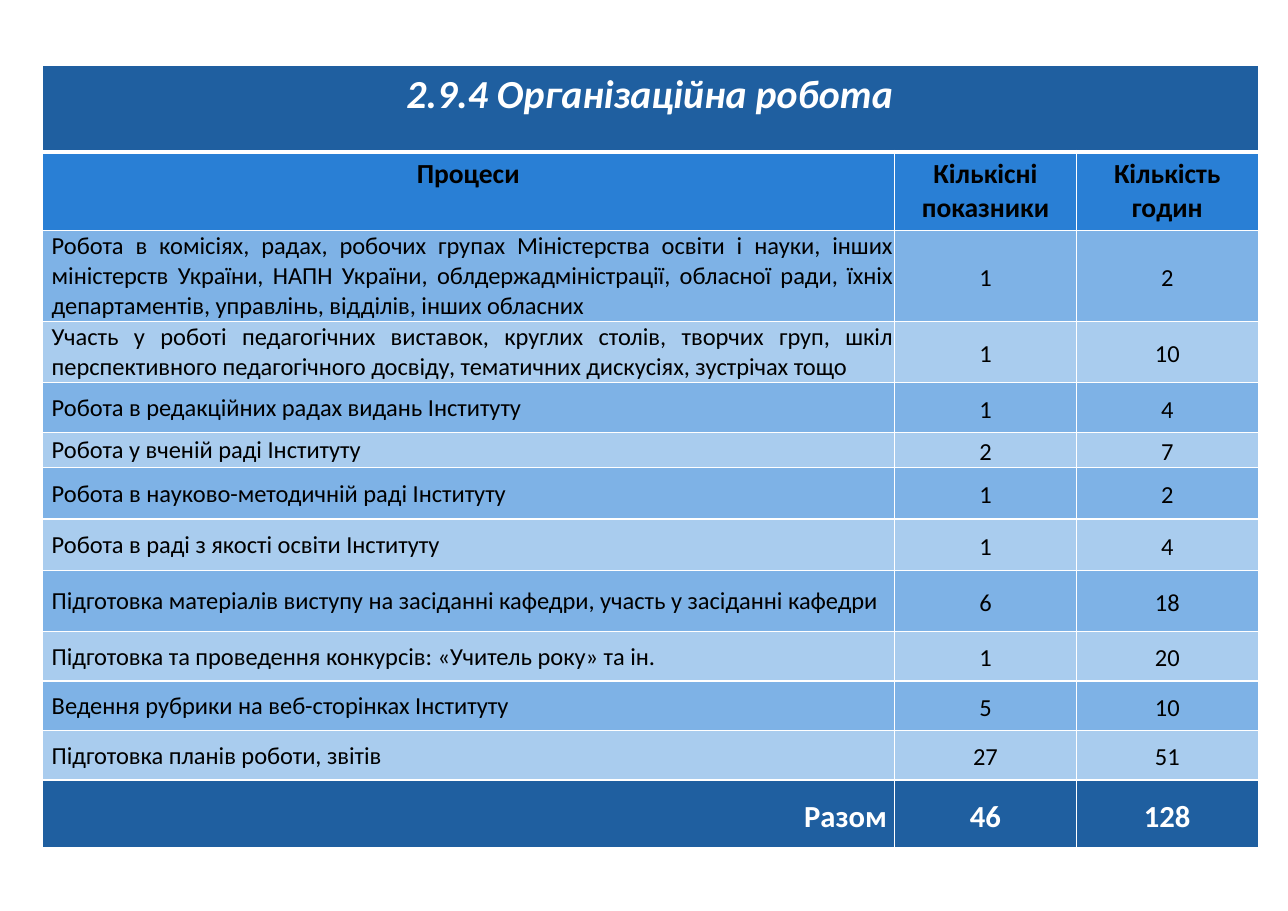
"""Build the slide with the table of organisational work hours."""
from lxml.etree import SubElement
from pptx import Presentation
from pptx.dml.color import RGBColor
from pptx.enum.text import MSO_ANCHOR, PP_ALIGN
from pptx.oxml.ns import qn
from pptx.util import Inches, Pt

TITLE = "2.9.4 Організаційна робота"
HEADINGS = ("Процеси", "Кількісні показники", "Кількість годин")
PROCESSES = [
    ("Робота в комісіях, радах, робочих групах Міністерства освіти і науки, інших "
     "міністерств України, НАПН України, облдержадміністрації, обласної ради, їхніх "
     "департаментів, управлінь, відділів, інших обласних", 1, 2),
    ("Участь у роботі педагогічних виставок, круглих столів, творчих груп, шкіл "
     "перспективного педагогічного досвіду, тематичних дискусіях, зустрічах тощо", 1, 10),
    ("Робота в редакційних радах видань Інституту", 1, 4),
    ("Робота у вченій раді Інституту", 2, 7),
    ("Робота в науково-методичній раді Інституту", 1, 2),
    ("Робота в раді з якості освіти Інституту", 1, 4),
    ("Підготовка матеріалів виступу на засіданні кафедри, участь у засіданні кафедри", 6, 18),
    ("Підготовка та проведення конкурсів: «Учитель року» та ін.", 1, 20),
    ("Ведення рубрики на веб-сторінках Інституту", 5, 10),
    ("Підготовка планів роботи, звітів", 27, 51),
]
TOTAL = ("Разом", 46, 128)

COLOURS = {"dark": "1F5FA0", "heading": "297FD5", "odd": "7EB2E6", "even": "A9CCEE",
           "white": "FFFFFF", "black": "000000"}
COLUMN_WIDTHS = (7.74, 1.65, 1.65)
PROCESS_HEIGHTS = (0.49, 0.48, 0.46, 0.31, 0.47, 0.47, 0.55, 0.45, 0.45, 0.45)
ROW_HEIGHTS = (0.79, 0.7, *PROCESS_HEIGHTS, 0.63)
TABLE_HEIGHT = 7.08
HEADING_INSETS = (0.11, 0.05, 0.11, 0.05)
PROCESS_INSETS = (0.01, 0.01, 0.01, 0)
NUMBER_INSETS = (0.07, 0, 0.07, 0)
THIN, THICK = 1, 3


def add_borders(cell, top, bottom):
    """Draw white lines on all four sides of a cell."""
    properties = cell._tc.get_or_add_tcPr()
    sides = (("lnL", THIN), ("lnR", THIN), ("lnT", top), ("lnB", bottom))
    for position, (side, width) in enumerate(sides):
        line = SubElement(properties, qn(f"a:{side}"), w=str(Pt(width)))
        fill = SubElement(line, qn("a:solidFill"))
        SubElement(fill, qn("a:srgbClr"), val=COLOURS["white"])
        properties.insert(position, line)


def fill_cell(cell, text, fill, size, align=PP_ALIGN.CENTER, colour="black", bold=False,
              italic=False, insets=NUMBER_INSETS, anchor=MSO_ANCHOR.MIDDLE,
              spacing=None, indent=0, top=THIN, bottom=THIN):
    """Write and style one cell."""
    cell.fill.solid()
    cell.fill.fore_color.rgb = RGBColor.from_string(COLOURS[fill])
    add_borders(cell, top, bottom)
    cell.vertical_anchor = anchor
    (cell.margin_left, cell.margin_top,
     cell.margin_right, cell.margin_bottom) = map(Inches, insets)
    cell.text = str(text)
    paragraph = cell.text_frame.paragraphs[0]
    paragraph.alignment = align
    if spacing:
        paragraph.line_spacing = spacing
    if indent:
        paragraph._p.get_or_add_pPr().set("marL", str(Inches(indent)))
    font = paragraph.font
    font.name, font.size, font.bold, font.italic = "Calibri", Pt(size), bold, italic
    font.color.rgb = RGBColor.from_string(COLOURS[colour])


def main():
    """Lay out the table and save the presentation."""
    deck = Presentation()
    deck.slide_width, deck.slide_height = Inches(11.69), Inches(8.27)
    slide = deck.slides.add_slide(deck.slide_layouts[6])
    frame = slide.shapes.add_table(
        len(ROW_HEIGHTS), len(COLUMN_WIDTHS), Inches(0.38), Inches(0.59),
        Inches(sum(COLUMN_WIDTHS)), Inches(TABLE_HEIGHT))
    table = frame.table
    for column, width in zip(table.columns, COLUMN_WIDTHS):
        column.width = Inches(width)
    for row, height in zip(table.rows, ROW_HEIGHTS):
        row.height = Inches(height)
    frame.height = Inches(TABLE_HEIGHT)

    table.cell(0, 0).merge(table.cell(0, len(HEADINGS) - 1))
    fill_cell(table.cell(0, 0), TITLE, "dark", 26, colour="white", bold=True, italic=True,
              insets=(0.1, 0.05, 0.1, 0.05), anchor=MSO_ANCHOR.TOP, bottom=THICK)
    for column, heading in enumerate(HEADINGS):
        fill_cell(table.cell(1, column), heading, "heading", 18, bold=True,
                  insets=HEADING_INSETS, anchor=MSO_ANCHOR.TOP, top=THICK)

    for row, (process, *numbers) in enumerate(PROCESSES, start=2):
        band = "even" if row % 2 else "odd"
        fill_cell(table.cell(row, 0), process, band, 16, align=PP_ALIGN.JUSTIFY,
                  insets=PROCESS_INSETS, indent=0.08)
        for column, number in enumerate(numbers, start=1):
            fill_cell(table.cell(row, column), number, band, 16, spacing=1.15)

    for column, entry in enumerate(TOTAL):
        fill_cell(table.cell(len(ROW_HEIGHTS) - 1, column), entry, "dark", 20,
                  align=PP_ALIGN.CENTER if column else PP_ALIGN.RIGHT,
                  colour="white", bold=True, spacing=1.15, bottom=THICK)
    deck.save("out.pptx")


if __name__ == "__main__":
    main()
